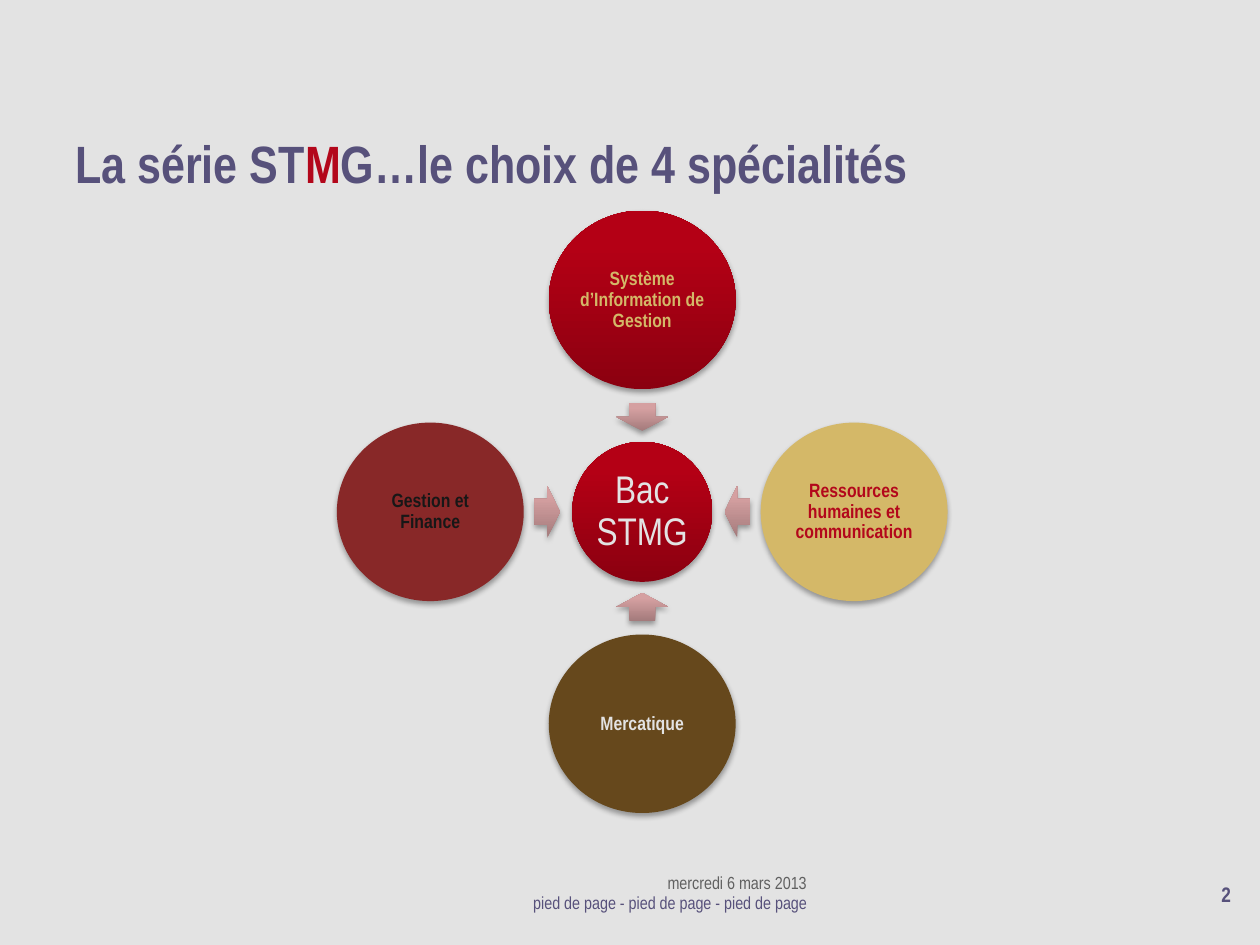
from lxml import etree
from pptx import Presentation
from pptx.dml.color import RGBColor
from pptx.enum.shapes import MSO_SHAPE
from pptx.enum.text import MSO_ANCHOR, PP_ALIGN
from pptx.oxml.ns import nsdecls
from pptx.util import Pt

OVAL, ARROW = MSO_SHAPE.OVAL, MSO_SHAPE.LEFT_ARROW
TOP, MIDDLE = MSO_ANCHOR.TOP, MSO_ANCHOR.MIDDLE
LEFT, CENTER, RIGHT = PP_ALIGN.LEFT, PP_ALIGN.CENTER, PP_ALIGN.RIGHT

FONT = "Arial Narrow"
PALE, VIOLET, RED, GOLD = "E3E3E3", "57517B", "B3071B", "D4B868"
RED_GRADIENT = [(0, "8B0010"), (80, "B40015"), (100, "B50015")]
PINK_GRADIENT = [(0, "A47B7C"), (80, "D5A0A1"), (100, "D79FA0")]

TITLE = [("La série ST", VIOLET), ("M", RED), ("G…le choix de 4 spécialités", VIOLET)]
# box, text, colour, format
FOOTERS = [
    ((268, 498.4, 200, 12), "mercredi 6 mars 2013", "606060", dict(size=Pt(10))),
    ((54, 510, 414, 12), "pied de page - pied de page - pied de page", VIOLET, dict(size=Pt(10))),
    ((677.5, 504, 33, 14.4), "2", VIOLET, dict(size=Pt(12), bold=True)),
]
# text, fill, text colour, direction from the hub, arrow rotation, arrow length
SPECIALITIES = [
    ("Système d’Information de Gestion", RED_GRADIENT, GOLD, (0, -1), 270, 16),
    ("Ressources humaines et communication", GOLD, RED, (1, 0), 0, 14.6),
    ("Mercatique", "66481C", PALE, (0, 1), 90, 16),
    ("Gestion et Finance", "882828", "171717", (-1, 0), 180, 14.6),
]
HUB_X, HUB_Y, HUB_SIZE = 367, 292.5, 80
ORBIT, ARROW_ORBIT = 121.1, 54.3
OVAL_W, OVAL_H, ARROW_H = 106.8, 102, 29.6
INNER = 0.707  # side of the square inscribed in a circle


def rgb(value):
    return RGBColor.from_string(value)


def centred(cx, cy, w, h):
    return cx - w / 2, cy - h / 2, w, h


def add_text(s, box, runs, fmt, align=LEFT, anchor=TOP, side=7.2, edge=0, spacing=None):
    tf = s.shapes.add_textbox(*map(Pt, box)).text_frame
    frame = dict(word_wrap=True, vertical_anchor=anchor, margin_left=Pt(side),
                 margin_right=Pt(side), margin_top=Pt(edge), margin_bottom=Pt(edge))
    for name, value in frame.items():
        setattr(tf, name, value)
    p = tf.paragraphs[0]
    p.alignment = align
    if spacing:
        p.line_spacing = spacing
    for text, colour in runs:
        r = p.add_run()
        r.text = text
        for name, value in dict(name=FONT, **fmt).items():
            setattr(r.font, name, value)
        r.font.color.rgb = rgb(colour)


def set_gradient(sp):
    """Return a function that fills sp upwards, whatever its rotation."""


def add_shaded(s, kind, box, fill, rotation=0):
    """Add a shape with a soft shadow; a list of stops is a gradient from the bottom up."""
    sp = s.shapes.add_shape(kind, *map(Pt, box))
    sp.rotation = rotation
    sp.line.fill.background()
    if isinstance(fill, str):
        sp.fill.solid()
        sp.fill.fore_color.rgb = rgb(fill)
    else:
        stops = "".join(f'<a:gs pos="{pos * 1000}"><a:srgbClr val="{colour}"/></a:gs>'
                        for pos, colour in fill)
        sp._element.spPr.find("{*}prstGeom").addnext(etree.fromstring(
            f'<a:gradFill {nsdecls("a")} rotWithShape="0"><a:gsLst>{stops}</a:gsLst>'
            '<a:lin ang="16200000" scaled="0"/></a:gradFill>'))
    sp._element.spPr.append(etree.fromstring(
        f'<a:effectLst {nsdecls("a")}><a:outerShdw blurRad="{Pt(3.1)}" dist="{Pt(1.8)}" '
        'dir="5400000" rotWithShape="0"><a:srgbClr val="000000"><a:alpha val="35000"/>'
        '</a:srgbClr></a:outerShdw></a:effectLst>'))


def add_bubble(s, cx, cy, w, h, fill, text, colour, fmt, inset):
    add_shaded(s, OVAL, centred(cx, cy, w, h), fill)
    add_text(s, centred(cx, cy, w * INNER, h * INNER), [(text, colour)], fmt,
             CENTER, MIDDLE, inset, inset, 0.9)


def main():
    prs = Presentation()
    prs.slide_width, prs.slide_height = Pt(720), Pt(540)
    s = prs.slides.add_slide(prs.slide_layouts[6])
    s.background.fill.solid()
    s.background.fill.fore_color.rgb = rgb(PALE)

    add_text(s, (36, 54, 648, 81), TITLE, dict(size=Pt(30), bold=True),
             anchor=MIDDLE, spacing=Pt(33))
    for box, text, colour, fmt in FOOTERS:
        add_text(s, box, [(text, colour)], fmt, RIGHT)

    add_bubble(s, HUB_X, HUB_Y, HUB_SIZE, HUB_SIZE, RED_GRADIENT,
               "Bac STMG", PALE, dict(size=Pt(22)), 2.2)
    for text, fill, colour, (dx, dy), rotation, length in SPECIALITIES:
        arrow = centred(HUB_X + dx * ARROW_ORBIT, HUB_Y + dy * ARROW_ORBIT, length, ARROW_H)
        add_shaded(s, ARROW, arrow, PINK_GRADIENT, rotation)
        add_bubble(s, HUB_X + dx * ORBIT, HUB_Y + dy * ORBIT, OVAL_W, OVAL_H, fill,
                   text, colour, dict(size=Pt(11), bold=True), 1.4)
    prs.save("out.pptx")


if __name__ == "__main__":
    main()
